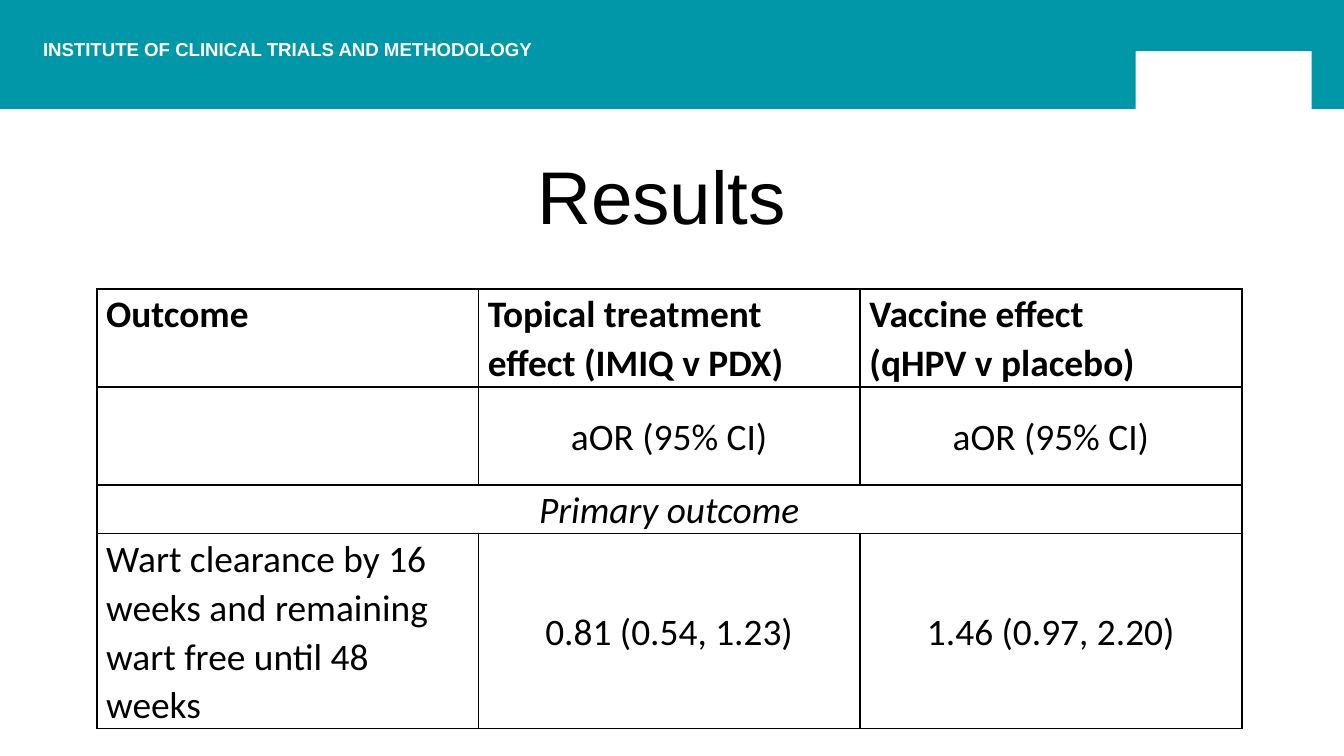
from dataclasses import dataclass

import pptx
import pptx.dml.color
import pptx.enum.text
import pptx.oxml
import pptx.oxml.ns
import pptx.util

Inches, Pt = pptx.util.Inches, pptx.util.Pt
RGB = pptx.dml.color.RGBColor.from_string
ALIGN, ANCHOR = pptx.enum.text.PP_ALIGN, pptx.enum.text.MSO_ANCHOR


@dataclass(frozen=True)
class Theme:
    teal: str = "0097A9"
    white: str = "FFFFFF"
    black: str = "000000"
    heading_font: str = "Arial"
    table_font: str = "Calibri"
    banner_size: int = 10
    title_size: int = 40
    table_size: int = 20
    border_width: int = 1


@dataclass(frozen=True)
class Entry:
    text: str = ""
    bold: bool = False
    italic: bool = False
    centred: bool = False
    span: int = 1


THEME = Theme()
SLIDE_WIDTH = 10
SLIDE_HEIGHT = SLIDE_WIDTH * 9 / 16
# Banner outline with a plain notch where the emblem sits
BANNER = ((0, 0), (0, 0.81), (8.45, 0.81), (8.45, 0.38), (9.76, 0.38),
          (9.76, 0.81), (SLIDE_WIDTH, 0.81), (SLIDE_WIDTH, 0))
COLUMN_WIDTH = 2.84
ROW_HEIGHTS = (0.73, 0.73, 0.36, 1.45)
ODDS_RATIO = Entry("aOR (95% CI)", centred=True)
ROWS = (
    (Entry("Outcome", bold=True),
     Entry("Topical treatment effect (IMIQ v PDX)", bold=True),
     Entry("Vaccine effect\n(qHPV v placebo)", bold=True)),
    (Entry(), ODDS_RATIO, ODDS_RATIO),
    (Entry("Primary outcome", italic=True, centred=True, span=3),),
    (Entry("Wart clearance by 16 weeks and remaining wart free until 48 weeks"),
     Entry("0.81 (0.54, 1.23)", centred=True),
     Entry("1.46 (0.97, 2.20)", centred=True)),
)


def style_font(font, name: str, size: int, color: str,
               bold: bool = False, italic: bool = False) -> None:
    font.name, font.size = name, Pt(size)
    font.bold, font.italic = bold, italic
    font.color.rgb = RGB(color)


def add_banner(s) -> None:
    start, *others = [(Inches(x), Inches(y)) for x, y in BANNER]
    builder = s.shapes.build_freeform(*start)
    builder.add_line_segments(others, close=True)
    sp = builder.convert_to_shape()
    sp.shadow.inherit = False
    sp.fill.solid()
    sp.fill.fore_color.rgb = RGB(THEME.teal)
    sp.line.fill.background()


def add_label(s, text: str, x: float, y: float, w: float, h: float,
              size: int, color: str, bold: bool = False,
              centred: bool = False) -> None:
    tf = s.shapes.add_textbox(Inches(x), Inches(y), Inches(w), Inches(h)).text_frame
    tf.text = text
    tf.word_wrap = centred
    tf.margin_left = tf.margin_right = tf.margin_top = tf.margin_bottom = 0
    tf.vertical_anchor = ANCHOR.MIDDLE if centred else ANCHOR.TOP
    p = tf.paragraphs[0]
    p.alignment = ALIGN.CENTER if centred else ALIGN.LEFT
    style_font(p.runs[0].font, THEME.heading_font, size, color, bold)


def set_borders(cell) -> None:
    props = cell._tc.get_or_add_tcPr()
    for i, side in enumerate(("lnL", "lnR", "lnT", "lnB")):
        props.insert(i, pptx.oxml.parse_xml(
            f'<a:{side} {pptx.oxml.ns.nsdecls("a")} w="{Pt(THEME.border_width)}">'
            f'<a:solidFill><a:srgbClr val="{THEME.black}"/></a:solidFill></a:{side}>'))


def fill_cell(cell, entry: Entry) -> None:
    cell.margin_left = cell.margin_right = Inches(0.07)
    cell.margin_top = cell.margin_bottom = 0
    cell.vertical_anchor = ANCHOR.MIDDLE if entry.centred else ANCHOR.TOP
    cell.text_frame.text = entry.text
    for p in cell.text_frame.paragraphs:
        p.alignment = ALIGN.CENTER if entry.centred else ALIGN.LEFT
        p.line_spacing = 1.07
        for r in p.runs:
            style_font(r.font, THEME.table_font, THEME.table_size, THEME.black,
                       entry.bold, entry.italic)


def add_results_table(s, x: float, y: float) -> None:
    columns = len(ROWS[0])
    frame = s.shapes.add_table(len(ROWS), columns, Inches(x), Inches(y),
                               Inches(COLUMN_WIDTH * columns), Inches(sum(ROW_HEIGHTS)))
    table = frame.table
    table.first_row = table.horz_banding = False
    for column in table.columns:
        column.width = Inches(COLUMN_WIDTH)
    for row, height in zip(table.rows, ROW_HEIGHTS):
        row.height = Inches(height)
    for cell in table.iter_cells():
        cell.fill.background()
        set_borders(cell)
    for i, entries in enumerate(ROWS):
        for j, entry in enumerate(entries):
            cell = table.cell(i, j)
            if entry.span > 1:
                cell.merge(table.cell(i, j + entry.span - 1))
            fill_cell(cell, entry)


def main() -> None:
    prs = pptx.Presentation()
    prs.slide_width, prs.slide_height = Inches(SLIDE_WIDTH), Inches(SLIDE_HEIGHT)
    s = prs.slides.add_slide(prs.slide_layouts[6])

    # Banner
    add_banner(s)
    add_label(s, "INSTITUTE OF CLINICAL TRIALS AND METHODOLOGY",
              0.32, 0.28, 3.69, 0.17, THEME.banner_size, THEME.white, bold=True)

    # Title
    add_label(s, "Results ", 0.5, 0.98, 9, 0.94,
              THEME.title_size, THEME.black, centred=True)

    # Results
    add_results_table(s, 0.72, 2.15)

    prs.save("out.pptx")


if __name__ == "__main__":
    main()
